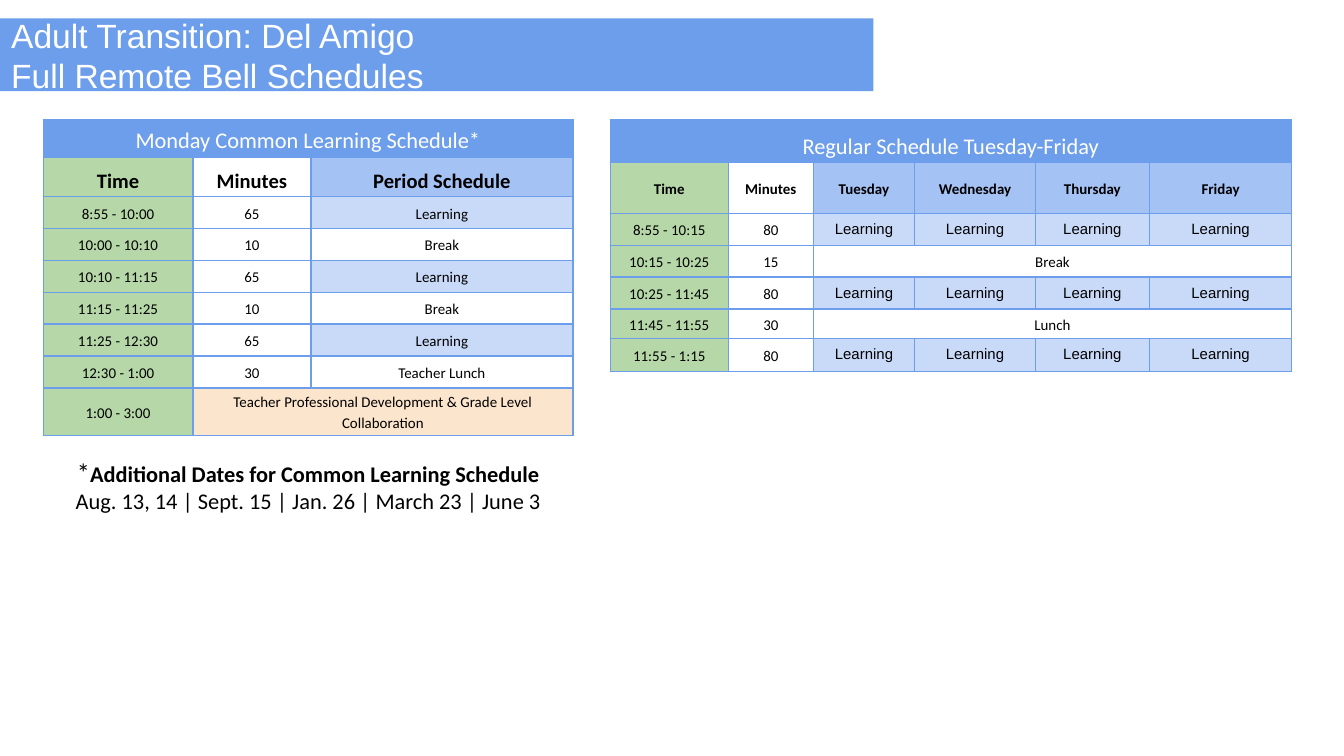
from dataclasses import dataclass

from lxml import etree
from pptx import Presentation
from pptx.dml.color import RGBColor
from pptx.enum import shapes, text
from pptx.oxml import ns
from pptx.util import Pt

BLUE = RGBColor(0x6D, 0x9E, 0xEB)
MID_BLUE = RGBColor(0xA4, 0xC2, 0xF4)
PALE_BLUE = RGBColor(0xC9, 0xDA, 0xF8)
GREEN = RGBColor(0xB6, 0xD7, 0xA8)
PEACH = RGBColor(0xFC, 0xE5, 0xCD)
WHITE = RGBColor(0xFF, 0xFF, 0xFF)
BLACK = RGBColor(0, 0, 0)


@dataclass(frozen=True)
class CellStyle:
    fill: RGBColor | None
    size: float = 8
    bold: bool = False
    color: RGBColor = BLACK
    font: str = "Calibri"
    spacing: float = 1.15
    anchor: text.MSO_ANCHOR = text.MSO_ANCHOR.MIDDLE
    margin_top: float = 0.9
    margin_bottom: float = 0.9


@dataclass(frozen=True)
class Entry:
    label: str
    style: CellStyle
    span: int = 1


@dataclass(frozen=True)
class Schedule:
    left: float
    top: float
    columns: list[float]
    row_heights: list[float]
    rows: list[list[Entry]]


BOTTOM = text.MSO_ANCHOR.BOTTOM
TIME = CellStyle(GREEN)
PLAIN = CellStyle(None)
PAUSE = CellStyle(WHITE)
LEARNING = CellStyle(PALE_BLUE)
ARIAL_LEARNING = CellStyle(PALE_BLUE, font="Arial", spacing=1)
TRAINING = CellStyle(PEACH, margin_top=1.5, margin_bottom=1.5)
MONDAY_TITLE = CellStyle(BLUE, 12, color=WHITE, anchor=BOTTOM, margin_top=1.5, margin_bottom=1.5)
REGULAR_TITLE = CellStyle(BLUE, 12, color=WHITE, margin_top=5.2)


def monday_heading(label: str, fill: RGBColor | None) -> Entry:
    return Entry(label, CellStyle(fill, 11, True, anchor=BOTTOM, margin_top=1.5, margin_bottom=1.5))


def regular_heading(label: str, fill: RGBColor | None) -> Entry:
    return Entry(label, CellStyle(fill, bold=True))


def slot(time: str, minutes: str, *activities: Entry) -> list[Entry]:
    return [Entry(time, TIME), Entry(minutes, PLAIN), *activities]


LEARNING_DAYS = [Entry("Learning", ARIAL_LEARNING)] * 4
DAYS = ["Tuesday", "Wednesday", "Thursday", "Friday"]

MONDAY = Schedule(
    23.2, 64, [80.2, 63.2, 140.4], [20.4, 20.9] + [17.1] * 6 + [25.4],
    [
        [Entry("Monday Common Learning Schedule*", MONDAY_TITLE, 3)],
        [
            monday_heading("Time", GREEN),
            monday_heading("Minutes", None),
            monday_heading("Period Schedule", MID_BLUE),
        ],
        slot("8:55 - 10:00", "65", Entry("Learning", LEARNING)),
        slot("10:00 - 10:10", "10", Entry("Break", PAUSE)),
        slot("10:10 - 11:15", "65", Entry("Learning", LEARNING)),
        slot("11:15 - 11:25", "10", Entry("Break", PAUSE)),
        slot("11:25 - 12:30", "65", Entry("Learning", LEARNING)),
        slot("12:30 - 1:00", "30", Entry("Teacher Lunch", PAUSE)),
        [
            Entry("1:00 - 3:00", TIME),
            Entry("Teacher Professional Development & Grade Level Collaboration", TRAINING, 2),
        ],
    ],
)

REGULAR = Schedule(
    326.9, 64, [63.4, 45.4, 54.4, 64.6, 61.2, 76.2],
    [23, 27.3, 17.1, 17.1, 17.1, 15.6, 17.7],
    [
        [Entry("Regular Schedule Tuesday-Friday", REGULAR_TITLE, 6)],
        [
            regular_heading("Time", GREEN),
            regular_heading("Minutes", None),
            *[regular_heading(day, MID_BLUE) for day in DAYS],
        ],
        slot("8:55 - 10:15", "80", *LEARNING_DAYS),
        slot("10:15 - 10:25", "15", Entry("Break", PAUSE, 4)),
        slot("10:25 - 11:45", "80", *LEARNING_DAYS),
        slot("11:45 - 11:55", "30", Entry("Lunch", PAUSE, 4)),
        slot("11:55 - 1:15", "80", *LEARNING_DAYS),
    ],
)


def format_font(font, name: str, size: float, color: RGBColor, bold: bool = False) -> None:
    font.name = name
    font.size = Pt(size)
    font.bold = bold
    font.color.rgb = color


def add_borders(cell) -> None:
    """Line all four sides of a cell; the lines must precede its fill."""
    properties = cell._tc.get_or_add_tcPr()
    for index, side in enumerate(("lnL", "lnR", "lnT", "lnB")):
        line = etree.Element(ns.qn(f"a:{side}"), w=str(Pt(0.83)))
        fill = etree.SubElement(line, ns.qn("a:solidFill"))
        etree.SubElement(fill, ns.qn("a:srgbClr"), val=str(BLUE))
        properties.insert(index, line)


def fill_cell(cell, entry: Entry) -> None:
    style = entry.style
    if style.fill is None:
        cell.fill.background()
    else:
        cell.fill.solid()
        cell.fill.fore_color.rgb = style.fill
    cell.margin_left = cell.margin_right = Pt(2.2)
    cell.margin_top = Pt(style.margin_top)
    cell.margin_bottom = Pt(style.margin_bottom)
    cell.vertical_anchor = style.anchor
    cell.text_frame.text = entry.label
    paragraph = cell.text_frame.paragraphs[0]
    paragraph.alignment = text.PP_ALIGN.CENTER
    paragraph.line_spacing = style.spacing
    format_font(paragraph.runs[0].font, style.font, style.size, style.color, style.bold)


def add_schedule(slide, schedule: Schedule) -> None:
    frame = slide.shapes.add_table(
        len(schedule.rows), len(schedule.columns), Pt(schedule.left), Pt(schedule.top),
        Pt(sum(schedule.columns)), Pt(sum(schedule.row_heights)),
    )
    table = frame.table
    table.first_row = table.horz_banding = False
    for column, width in zip(table.columns, schedule.columns):
        column.width = Pt(width)
    for row, height in zip(table.rows, schedule.row_heights):
        row.height = Pt(height)
    for row_index, entries in enumerate(schedule.rows):
        column_index = 0
        for entry in entries:
            cell = table.cell(row_index, column_index)
            column_index += entry.span
            if entry.span > 1:
                cell.merge(table.cell(row_index, column_index - 1))
            fill_cell(cell, entry)
    for cell in table.iter_cells():
        add_borders(cell)


def set_insets(text_frame) -> None:
    text_frame.word_wrap = True
    text_frame.margin_left = text_frame.margin_right = Pt(6)
    text_frame.margin_top = text_frame.margin_bottom = Pt(6)


def add_title(slide) -> None:
    banner = slide.shapes.add_shape(shapes.MSO_SHAPE.RECTANGLE, 0, Pt(9.9), Pt(468), Pt(39))
    banner.shadow.inherit = False
    banner.fill.solid()
    banner.fill.fore_color.rgb = BLUE
    banner.line.fill.background()
    set_insets(banner.text_frame)
    banner.text_frame.vertical_anchor = text.MSO_ANCHOR.MIDDLE
    banner.text_frame.text = "Adult Transition: Del Amigo\nFull Remote Bell Schedules"
    for paragraph in banner.text_frame.paragraphs:
        paragraph.alignment = text.PP_ALIGN.LEFT
        format_font(paragraph.runs[0].font, "Arial", 18, WHITE)


def add_extra_dates(slide) -> None:
    box = slide.shapes.add_textbox(Pt(17.3), Pt(238.3), Pt(296), Pt(16))
    set_insets(box.text_frame)
    box.text_frame.text = "*\nAug. 13, 14 | Sept. 15 | Jan. 26 | March 23 | June 3"
    heading, dates = box.text_frame.paragraphs
    heading.alignment = dates.alignment = text.PP_ALIGN.CENTER
    label = heading.add_run()
    label.text = "Additional Dates for Common Learning Schedule"
    format_font(heading.runs[0].font, "Calibri", 14, BLACK)
    format_font(label.font, "Calibri", 12, BLACK, True)
    format_font(dates.runs[0].font, "Calibri", 12, BLACK)


def main() -> None:
    presentation = Presentation()
    presentation.slide_width, presentation.slide_height = Pt(720), Pt(405)
    slide = presentation.slides.add_slide(presentation.slide_layouts[6])
    add_title(slide)
    add_schedule(slide, MONDAY)
    add_extra_dates(slide)
    add_schedule(slide, REGULAR)
    presentation.save("out.pptx")


if __name__ == "__main__":
    main()
